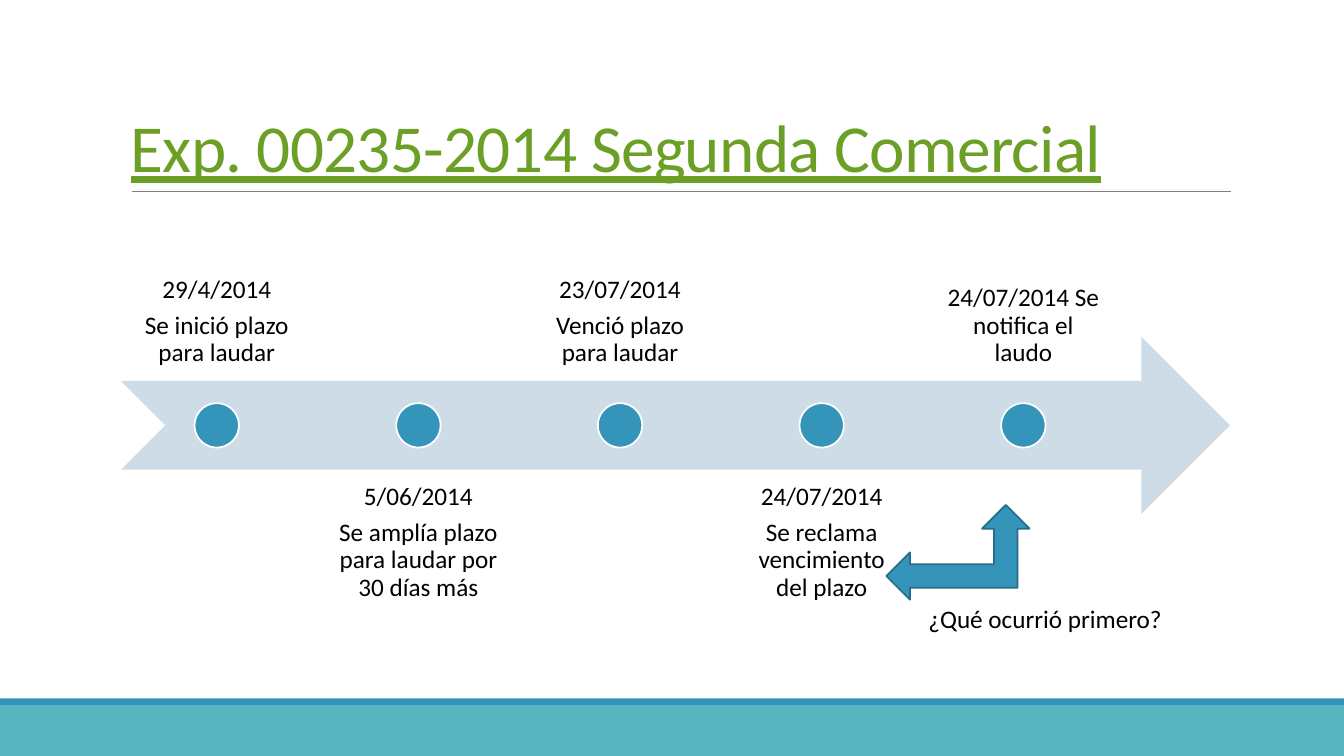
"""Build a timeline slide of the dates in a commercial court case."""
from lxml import etree
from pptx import Presentation, util as u
from pptx.dml.color import RGBColor
from pptx.enum import shapes, text
from pptx.oxml.ns import qn

TITLE = "Exp. 00235-2014 Segunda Comercial"
QUESTION = "¿Qué ocurrió primero?"
EVENTS = [
    ["29/4/2014", "Se inició plazo para laudar"],
    ["5/06/2014", "Se amplía plazo para laudar por 30 días más"],
    ["23/07/2014", "Venció plazo para laudar"],
    ["24/07/2014", "Se reclama vencimiento del plazo"],
    ["24/07/2014 Se notifica el laudo"],
]
THEME = {
    "font": "Calibri", "title_size": 48, "body_size": 18,
    "title": "6B9F25", "ink": "000000", "rule": "808080", "white": "FFFFFF",
    "footer": "58B6C0", "accent": "3494BA", "accent_edge": "266D8A", "band": "CEDCE7",
}
EMU_PER_PX = 9144
PAGE_WIDTH, PAGE_HEIGHT = 1333, 750
EVENT_LEFT, EVENT_STEP, EVENT_WIDTH, EVENT_HEIGHT = 120, 200, 190, 176
ABOVE_TOP, BELOW_TOP = 202, 466
DOT_SIZE, DOT_TOP = 44, 400


def px(*lengths):
    return [u.Emu(length * EMU_PER_PX) for length in lengths]


def color(name):
    return RGBColor.from_string(THEME[name])


def add_figure(page, kind, place, fill, edge=None):
    figure = page.shapes.add_shape(kind, *px(*place))
    figure.shadow.inherit = False
    figure.fill.solid()
    figure.fill.fore_color.rgb = color(fill)
    if edge:
        figure.line.color.rgb = color(edge)
        figure.line.width = u.Pt(1.25)
    else:
        figure.line.fill.background()


def add_text(page, lines, place, *, size=THEME["body_size"], ink="ink",
             align=text.PP_ALIGN.LEFT, anchor=text.MSO_ANCHOR.TOP, inset=None,
             spacing=1.0, after=0, underline=False, tracking=None):
    box = page.shapes.add_textbox(*px(*place))
    frame = box.text_frame
    frame.word_wrap = True
    frame.vertical_anchor = anchor
    if inset is not None:
        margin = px(inset)[0]
        frame.margin_left = frame.margin_right = margin
        frame.margin_top = frame.margin_bottom = margin
    for index, line in enumerate(lines):
        para = frame.add_paragraph() if index else frame.paragraphs[0]
        para.alignment = align
        para.line_spacing = spacing
        para.space_after = u.Pt(after)
        span = para.add_run()
        span.text = line
        span.font.name = THEME["font"]
        span.font.size = u.Pt(size)
        span.font.color.rgb = color(ink)
        span.font.underline = underline
        if tracking is not None:
            span._r.get_or_add_rPr().set("spc", str(tracking))


def add_rule(page, start, end):
    rule = page.shapes.add_connector(shapes.MSO_CONNECTOR.STRAIGHT, *px(*start, *end))
    rule.line.color.rgb = color("rule")
    rule.line.width = u.Pt(0.5)
    etree.SubElement(rule._element.spPr, qn("a:effectLst"))


def add_event(page, index, lines):
    left = EVENT_LEFT + index * EVENT_STEP
    above = index % 2 == 0
    add_text(page, lines,
             (left, ABOVE_TOP if above else BELOW_TOP, EVENT_WIDTH, EVENT_HEIGHT),
             align=text.PP_ALIGN.CENTER, inset=14, spacing=0.9, after=6.3,
             anchor=text.MSO_ANCHOR.BOTTOM if above else text.MSO_ANCHOR.TOP)
    dot_left = left + (EVENT_WIDTH - DOT_SIZE) // 2
    add_figure(page, shapes.MSO_SHAPE.OVAL, (dot_left, DOT_TOP, DOT_SIZE, DOT_SIZE),
               "accent", "white")


def main():
    deck = Presentation()
    deck.slide_width, deck.slide_height = px(PAGE_WIDTH, PAGE_HEIGHT)
    page = deck.slides.add_slide(deck.slide_layouts[6])
    kinds = shapes.MSO_SHAPE
    add_figure(page, kinds.RECTANGLE, (0, 700, PAGE_WIDTH, 50), "footer")
    add_figure(page, kinds.RECTANGLE, (0, 693, PAGE_WIDTH, 7), "accent")
    add_rule(page, (131, 190), (1221, 190))
    add_text(page, [TITLE], (120, 31, 1100, 159), size=THEME["title_size"], ink="title",
             anchor=text.MSO_ANCHOR.BOTTOM, spacing=0.85, underline=True, tracking=-50)
    add_figure(page, kinds.NOTCHED_RIGHT_ARROW, (120, 334, 1100, 176), "band")
    for index, lines in enumerate(EVENTS):
        add_event(page, index, lines)
    add_figure(page, kinds.LEFT_UP_ARROW, (879, 501, 142, 94), "accent", "accent_edge")
    add_text(page, [QUESTION], (911, 594, 326, 50))
    deck.save("out.pptx")


if __name__ == "__main__":
    main()
